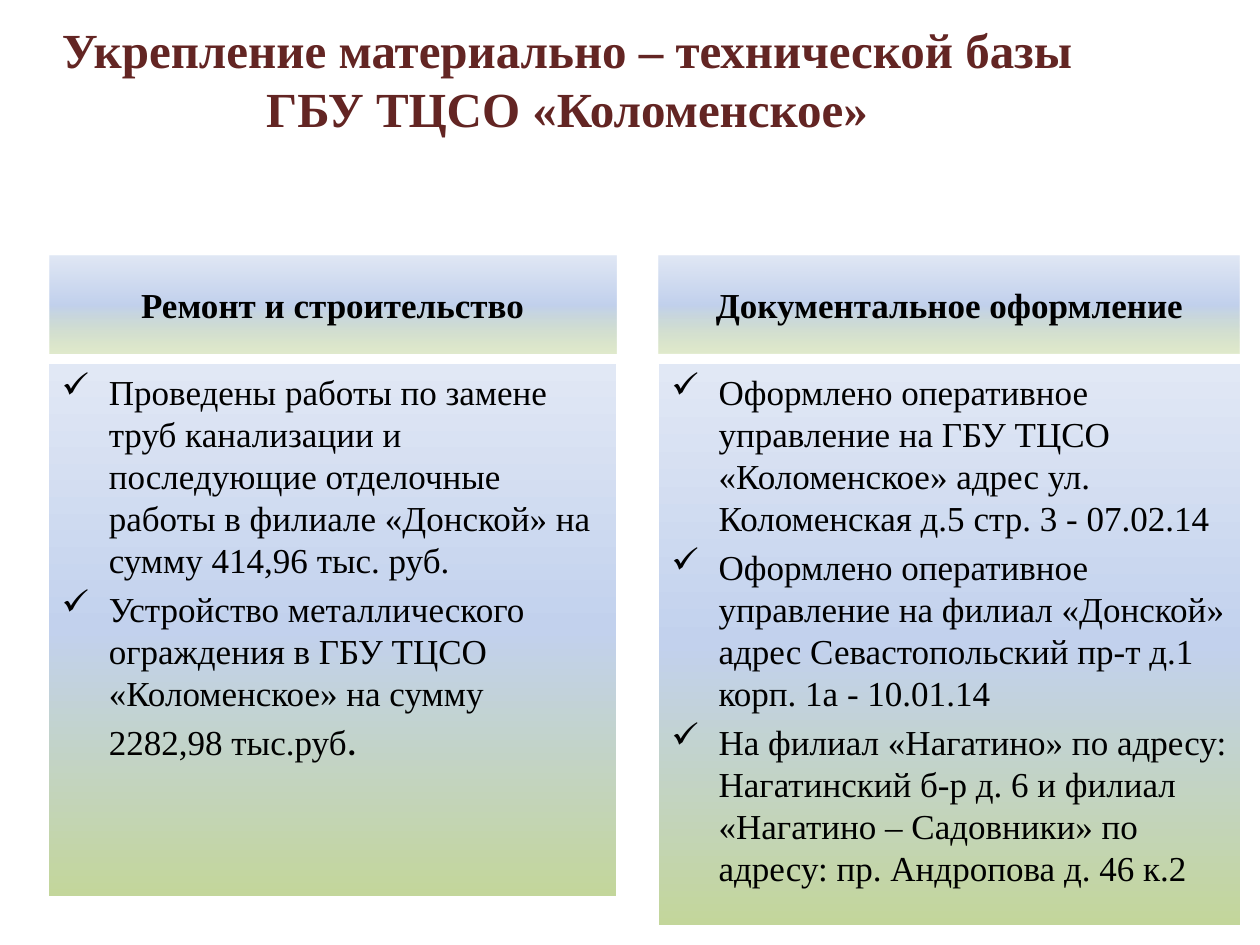
from lxml import etree
from pptx import Presentation
from pptx.dml.color import RGBColor
from pptx.enum import shapes, text
from pptx.oxml.ns import qn
from pptx.util import Inches, Pt

FONT = "Times New Roman"
COLORS = {"title": "632523", "text": "000000",
          "green": "C3D69B", "blue": "C2D1ED", "pale": "E1E8F5"}

TITLE = "Укрепление материально – технической базы ГБУ ТЦСО «Коломенское»"
# Each item is a list of runs; a run after the first is an accent
COLUMNS = [
    {"left": 0.39, "width": 4.5, "height": 4.22,
     "heading": "Ремонт и строительство",
     "items": [
         ["Проведены работы по замене труб канализации и последующие отделочные "
          "работы в филиале «Донской» на сумму 414,96 тыс. руб."],
         ["Устройство металлического ограждения в ГБУ ТЦСО «Коломенское» "
          "на сумму 2282,98 тыс.руб", "."],
     ]},
    {"left": 5.23, "width": 4.61, "height": 4.45,
     "heading": "Документальное оформление",
     "items": [
         ["Оформлено оперативное управление на ГБУ ТЦСО «Коломенское» "
          "адрес ул. Коломенская д.5 стр. 3 - 07.02.14"],
         ["Оформлено оперативное управление на филиал «Донской» "
          "адрес Севастопольский пр-т д.1 корп. 1а - 10.01.14"],
         ["На филиал «Нагатино» по адресу: Нагатинский б-р д. 6 и филиал "
          "«Нагатино – Садовники» по адресу: пр. Андропова д. 46 к.2"],
     ]},
]
HEADING_TOP, HEADING_HEIGHT, LIST_TOP = 2.03, 0.78, 2.89
INDENT = Pt(27)


def set_font(font, size, color="text", bold=False):
    font.name, font.size, font.bold = FONT, Pt(size), bold
    font.color.rgb = RGBColor.from_string(COLORS[color])


def add_panel(slide, column, top, height, green_alpha=100):
    """Rectangle shaded from green at the bottom to pale blue at the top."""
    panel = slide.shapes.add_shape(
        shapes.MSO_SHAPE.RECTANGLE, Inches(column["left"]), Inches(top),
        Inches(column["width"]), Inches(height))
    panel.shadow.inherit = False
    panel.line.fill.background()
    panel.fill.gradient()
    panel.fill.gradient_angle = 90
    stops = panel.element.spPr.find(".//" + qn("a:gsLst"))
    for stop in list(stops):
        stops.remove(stop)
    for position, name, alpha in ((0, "green", green_alpha), (50, "blue", 100),
                                  (100, "pale", 100)):
        stop = etree.SubElement(stops, qn("a:gs"), pos=str(position * 1000))
        color = etree.SubElement(stop, qn("a:srgbClr"), val=COLORS[name])
        if alpha < 100:
            etree.SubElement(color, qn("a:alpha"), val=str(alpha * 1000))
    panel.text_frame.word_wrap = True
    return panel.text_frame


def add_heading(slide, column):
    frame = add_panel(slide, column, HEADING_TOP, HEADING_HEIGHT, green_alpha=50)
    frame.vertical_anchor = text.MSO_ANCHOR.MIDDLE
    frame.text = column["heading"]
    frame.paragraphs[0].alignment = text.PP_ALIGN.CENTER
    set_font(frame.paragraphs[0].font, 20, bold=True)


def add_checklist(slide, column):
    frame = add_panel(slide, column, LIST_TOP, column["height"])
    frame.vertical_anchor = text.MSO_ANCHOR.TOP
    for index, runs in enumerate(column["items"]):
        item = frame.add_paragraph() if index else frame.paragraphs[0]
        properties = item._p.get_or_add_pPr()
        properties.set("marL", str(INDENT))
        properties.set("indent", str(-INDENT))
        etree.SubElement(properties, qn("a:buChar"), char="✓")
        item.alignment = text.PP_ALIGN.LEFT
        if index:
            item.space_before = Pt(4)
        set_font(item.font, 20)
        for position, words in enumerate(runs):
            run = item.add_run()
            run.text = words
            if position:
                run.font.name, run.font.size = "Calibri", Pt(24)


def main():
    deck = Presentation()
    deck.slide_width, deck.slide_height = Inches(10), Inches(7.5)
    slide = deck.slides.add_slide(deck.slide_layouts[5])

    # Title
    title = slide.shapes.title
    title.left, title.top = Inches(0), Inches(0)
    title.width, title.height = Inches(9), Inches(1.25)
    title.text_frame.text = TITLE
    title.text_frame.word_wrap = True
    title.text_frame.vertical_anchor = text.MSO_ANCHOR.MIDDLE
    title.text_frame.paragraphs[0].alignment = text.PP_ALIGN.CENTER
    set_font(title.text_frame.paragraphs[0].font, 28, "title", bold=True)

    # Two columns: heading over checklist
    for column in COLUMNS:
        add_heading(slide, column)
        add_checklist(slide, column)

    deck.save("out.pptx")


if __name__ == "__main__":
    main()
